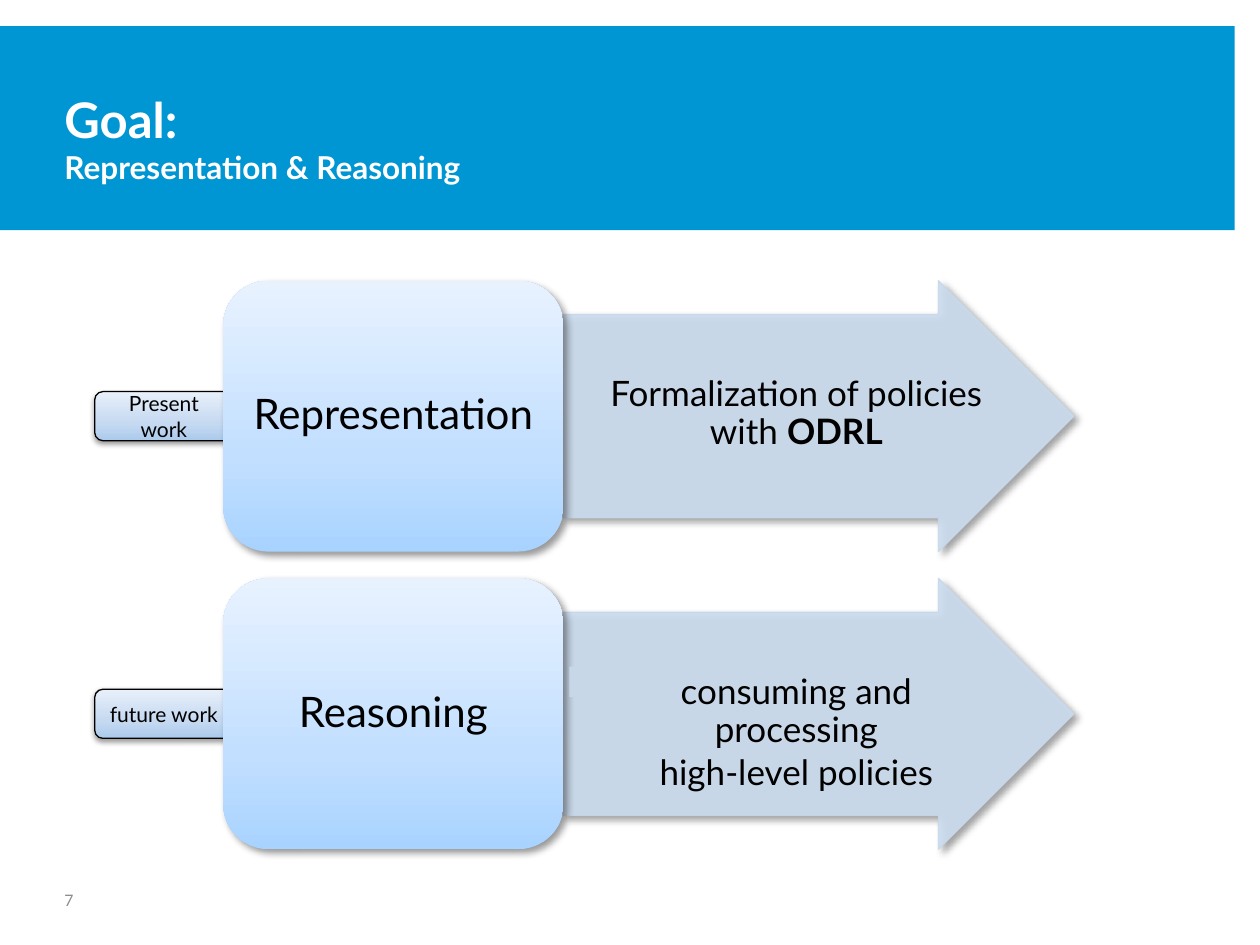
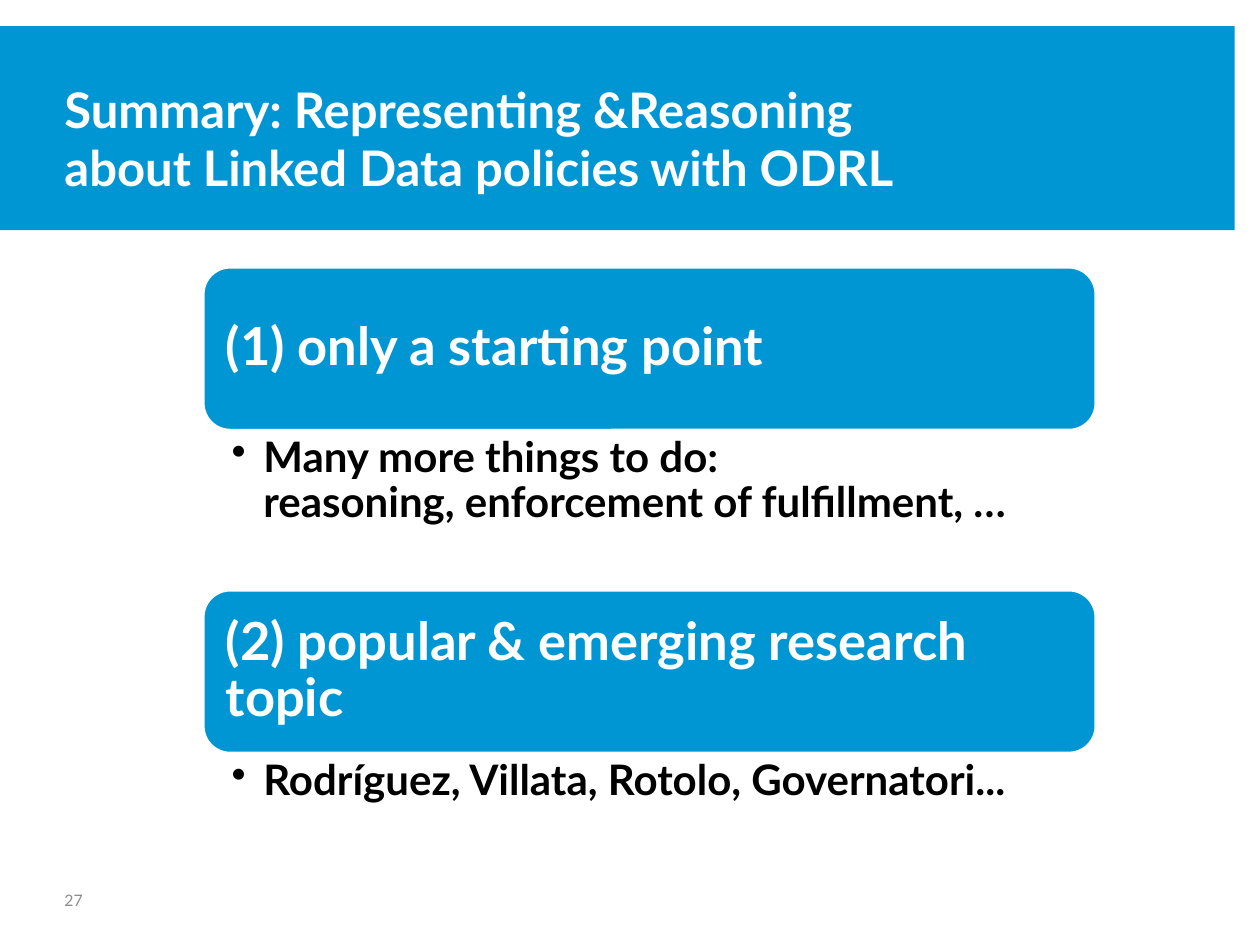
from copy import deepcopy

from lxml import etree
from pptx import Presentation
from pptx.dml.color import RGBColor
from pptx.enum.shapes import MSO_SHAPE
from pptx.enum.text import MSO_ANCHOR, MSO_AUTO_SIZE, PP_ALIGN
from pptx.oxml.ns import qn
from pptx.util import Cm, Pt

RECT, ROUND, ARROW = MSO_SHAPE.RECTANGLE, MSO_SHAPE.ROUNDED_RECTANGLE, MSO_SHAPE.RIGHT_ARROW
TOP, MIDDLE = MSO_ANCHOR.TOP, MSO_ANCHOR.MIDDLE
LEFT, CENTER = PP_ALIGN.LEFT, PP_ALIGN.CENTER
NO_AUTOFIT = MSO_AUTO_SIZE.NONE

FONT = "Lato"
BLUE, WHITE, BLACK, GREY = "0096D3", "FFFFFF", "000000", "8C8C8C"
ARROW_FILL, ARROW_LINE, SQUARE_FILL = "CCDDEF", "C7D8EB", "C7D7E8"
BLOCK_GRADIENT = [(0, "A8D3FF"), (0.35, "C2DFFF"), (1, "E8F2FF")]
TAG_GRADIENT = [(0, "ABCAEC"), (0.35, "C5D9F1"), (1, "E8F0FA")]
# opacity %, blur pt, distance pt, direction in degrees
BLOCK_SHADOW, TAG_SHADOW = (40, 4, 3, 45), (38, 3.1, 1.6, 90)
MARGIN = (0.25, 0.13, 0.25, 0.13)

# A paragraph is a list of (text, font settings that differ) runs.
GOAL_TITLE = [("Goal:\n", {}), ("Representation & Reasoning", {"size": Pt(18)})]
GOALS = [
    ("Present work", "Representation",
     [[("Formalization of policies\nwith ", {}), ("ODRL", {"bold": True})]]),
    ("future work", "Reasoning",
     [[("consuming and processing", {})], [("high-level policies", {})]]),
]
SUMMARY_TITLE = [
    ("Summary: Representing &Reasoning about Linked Data policies with ODRL", {})]
SUMMARY = [
    ("(1) only a starting point",
     "Many more things to do:\nreasoning, enforcement of fulfillment, …", 3.2),
    ("(2) popular & emerging research topic",
     "Rodríguez, Villata, Rotolo, Governatori...", 1.37),
]

GOAL_TOP, GOAL_STEP, GOAL_HEIGHT = 5.66, 6, 5.46
TAG_LEFT, TAG_WIDTH, TAG_HEIGHT = 1.91, 2.79, 0.99
BLOCK_LEFT, BLOCK_WIDTH, ARROW_WIDTH = 4.5, 6.86, 10.29
SUMMARY_TOP, SUMMARY_STEP = 5.38, 6.51
SUMMARY_LEFT, SUMMARY_WIDTH, HEADING_HEIGHT = 4.09, 18.01, 3.3


def rgb(color):
    return RGBColor.from_string(color)


def add_xml(parent, tag, **attributes):
    return etree.SubElement(parent, qn(tag), {k: str(v) for k, v in attributes.items()})


def write(shape, paragraphs, size, color=BLACK, bold=False, align=CENTER,
          anchor=MIDDLE, margin=MARGIN, spacing=None, bullet=False):
    tf = shape.text_frame
    tf.word_wrap = True
    tf.auto_size = NO_AUTOFIT
    tf.vertical_anchor = anchor
    tf.margin_left, tf.margin_top, tf.margin_right, tf.margin_bottom = map(Cm, margin)
    for i, runs in enumerate(paragraphs):
        p = tf.add_paragraph() if i else tf.paragraphs[0]
        p.alignment = align
        if spacing:
            p.line_spacing = spacing
        if i:
            p.space_before = Pt(3)
        if bullet:
            pPr = p._p.get_or_add_pPr()
            pPr.set("marL", str(Cm(0.64)))
            pPr.set("indent", str(-Cm(0.64)))
            add_xml(pPr, "a:buChar", char="•")
        p.font.name, p.font.size, p.font.bold = FONT, Pt(size), bold
        p.font.color.rgb = rgb(color)
        for text, settings in runs:
            for n, line in enumerate(text.split("\n")):
                if n:
                    p.add_line_break()
                if line:
                    r = p.add_run()
                    r.text = line
                    for name, value in settings.items():
                        setattr(r.font, name, value)


def add_box(s, kind, at, fill, line=None, line_width=0.75, shadow=None):
    """Add a shape; fill is one colour or a list of gradient stops, bottom to top."""
    sp = s.shapes.add_shape(kind, *map(Cm, at))
    if isinstance(fill, str):
        sp.fill.solid()
        sp.fill.fore_color.rgb = rgb(fill)
    else:
        sp.fill.gradient()
        sp.fill.gradient_angle = 90
        stops = sp._element.spPr.find(".//" + qn("a:gsLst"))
        stops.append(deepcopy(stops[-1]))
        for stop, (position, color) in zip(sp.fill.gradient_stops, fill):
            stop.position = position
            stop.color.rgb = rgb(color)
    if line:
        sp.line.color.rgb = rgb(line)
        sp.line.width = Pt(line_width)
    else:
        sp.line.fill.background()
    sp.shadow.inherit = False
    if shadow:
        opacity, blur, distance, angle = shadow
        effects = sp._element.spPr.find(qn("a:effectLst"))
        outer = add_xml(effects, "a:outerShdw", blurRad=Pt(blur), dist=Pt(distance),
                        dir=angle * 60000, rotWithShape=0)
        add_xml(add_xml(outer, "a:srgbClr", val=BLACK), "a:alpha", val=opacity * 1000)
    return sp


def add_text(s, at, paragraphs, size, **style):
    write(s.shapes.add_textbox(*map(Cm, at)), paragraphs, size, **style)


def add_slide(prs, title, number):
    s = prs.slides.add_slide(prs.slide_layouts[5])
    sp = s.shapes.title
    band = add_box(s, RECT, (0, 0.53, 24.89, 4.11), BLUE)
    sp._element.addprevious(band._element)
    sp.left, sp.top, sp.width, sp.height = map(Cm, (1.3, 1.19, 17.42, 3.18))
    write(sp, [title], 28, WHITE, bold=True, align=LEFT, margin=(0, 0, 0, 0))
    add_text(s, (1.3, 17.63, 2.49, 1.02), [[(number, {})]], 9, color=GREY,
             align=LEFT, margin=(0, 0.13, 0, 0.13))
    return s


def add_goal(s, top, tag, name, details):
    tag_top = top + (GOAL_HEIGHT - TAG_HEIGHT) / 2
    sp = add_box(s, ROUND, (TAG_LEFT, tag_top, TAG_WIDTH, TAG_HEIGHT), TAG_GRADIENT,
                 BLACK, shadow=TAG_SHADOW)
    write(sp, [[(tag, {})]], 12)

    arrow_left = BLOCK_LEFT + BLOCK_WIDTH
    sp = add_box(s, ARROW, (arrow_left, top, ARROW_WIDTH, GOAL_HEIGHT), ARROW_FILL,
                 ARROW_LINE, shadow=BLOCK_SHADOW)
    sp.adjustments[0], sp.adjustments[1] = 0.75, 0.5
    for color in sp._element.spPr.findall(".//" + qn("a:solidFill") + "/" + qn("a:srgbClr")):
        add_xml(color, "a:alpha", val=90000)

    sp = add_box(s, ROUND, (BLOCK_LEFT, top, BLOCK_WIDTH, GOAL_HEIGHT), BLOCK_GRADIENT,
                 shadow=BLOCK_SHADOW)
    write(sp, [[(name, {})]], 24, margin=(0.2, 0.2, 0.2, 0.2), spacing=0.9)
    add_text(s, (arrow_left + 0.44, top + 1.8, 8.51, 2.7), details, 20,
             anchor=TOP, spacing=0.9)


def build_goal(prs):
    s = add_slide(prs, GOAL_TITLE, "7")
    for i, goal in enumerate(GOALS):
        add_goal(s, GOAL_TOP + i * GOAL_STEP, *goal)
    add_box(s, RECT, (11.48, 13.44, 0.61, 0.61), SQUARE_FILL)


def build_summary(prs):
    s = add_slide(prs, SUMMARY_TITLE, "27")
    for i, (heading, detail, detail_height) in enumerate(SUMMARY):
        top = SUMMARY_TOP + i * SUMMARY_STEP
        sp = add_box(s, ROUND, (SUMMARY_LEFT, top, SUMMARY_WIDTH, HEADING_HEIGHT),
                     BLUE, WHITE, 2)
        write(sp, [[(heading, {})]], 30, WHITE, bold=True, align=LEFT,
              margin=(0.3, 0.3, 0.3, 0.3), spacing=0.9)
        add_text(s, (SUMMARY_LEFT, top + HEADING_HEIGHT + 0.03, SUMMARY_WIDTH, detail_height),
                 [[(detail, {})]], 24, bold=True, align=LEFT, anchor=TOP,
                 margin=(0.58, 0.08, 0.48, 0.08), spacing=0.9, bullet=True)


def main():
    prs = Presentation()
    prs.slide_width, prs.slide_height = Cm(25.4), Cm(19.05)
    build_goal(prs)
    build_summary(prs)
    prs.save("out.pptx")


if __name__ == "__main__":
    main()
